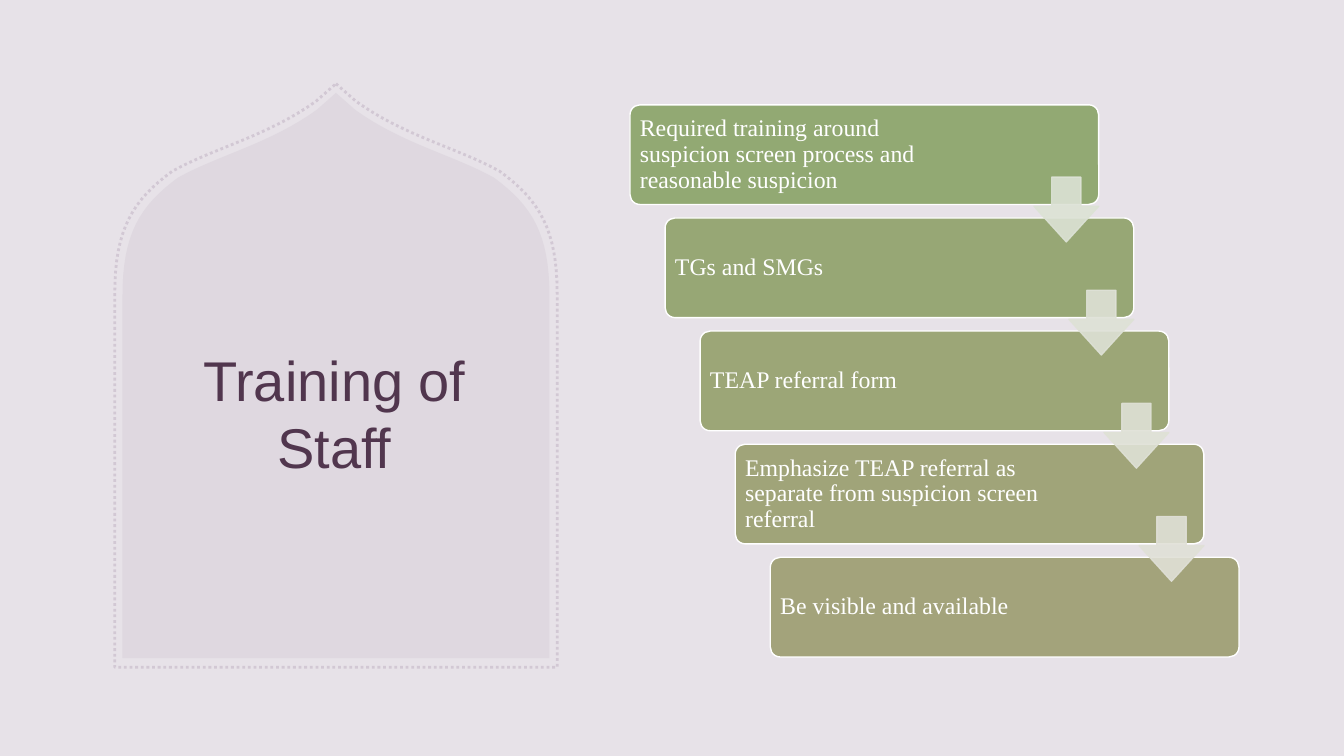
from pptx import Presentation
from pptx.dml.color import RGBColor
from pptx.enum import dml, shapes, text
from pptx.oxml import ns
from pptx.util import Pt
from lxml import etree

BACKGROUND = RGBColor(0xE7, 0xE2, 0xE8)
ARCH_FILL = RGBColor(0xB2, 0xA2, 0xB5)
ARCH_LINE = RGBColor(0xD2, 0xC8, 0xD4)
TITLE_COLOR = RGBColor(0x41, 0x24, 0x3C)
WHITE = RGBColor(0xFF, 0xFF, 0xFF)
STEPS = [
    ("Required training around suspicion screen process and reasonable suspicion",
     RGBColor(0x92, 0xA9, 0x73)),
    ("TGs and SMGs", RGBColor(0x97, 0xA7, 0x75)),
    ("TEAP referral form", RGBColor(0x9C, 0xA6, 0x77)),
    ("Emphasize TEAP referral as separate from suspicion screen referral",
     RGBColor(0xA0, 0xA4, 0x79)),
    ("Be visible and available", RGBColor(0xA3, 0xA3, 0x7B)),
]
ARROW_COLORS = [
    RGBColor(0xDC, 0xE2, 0xD5),
    RGBColor(0xDE, 0xE1, 0xD6),
    RGBColor(0xDF, 0xE1, 0xD6),
    RGBColor(0xE0, 0xE0, 0xD7),
]
SHOULDER_CURVES = [
    [(0.09, 0.03), (0.31, 0.09), (0.55, 0.11), (0.74, 0.15)],
    [(0.74, 0.15), (0.92, 0.2), (1, 0.25), (1, 0.36)],
]


def set_opacity(shape, percent):
    """Make every solid colour of the shape partly transparent."""
    for color in shape._element.spPr.iter(ns.qn("a:srgbClr")):
        alpha = etree.SubElement(color, ns.qn("a:alpha"))
        alpha.set("val", str(percent * 1000))


def bezier(points, count=16):
    """Return points along a cubic curve."""
    start, first, second, end = points
    curve = []
    for index in range(count + 1):
        t = index / count
        weights = ((1 - t) ** 3, 3 * t * (1 - t) ** 2, 3 * t * t * (1 - t), t ** 3)
        curve.append(tuple(
            sum(weight * point[axis] for weight, point in zip(weights, points))
            for axis in (0, 1)))
    return curve


def add_arch(page, left, top, width, height):
    """Draw a pointed arch filling the box."""
    right_half = [(0, 0)]
    for curve in SHOULDER_CURVES:
        right_half += bezier(curve)
    right_half.append((1, 1))
    left_half = [(-x, y) for x, y in reversed(right_half[1:])]
    outline = [(Pt(left + width * (1 + x) / 2), Pt(top + height * y))
               for x, y in right_half + left_half]
    builder = page.shapes.build_freeform(*outline[0])
    builder.add_line_segments(outline[1:], close=True)
    arch = builder.convert_to_shape()
    arch.shadow.inherit = False
    return arch


def add_title_panel(page, left, top, width, height):
    """Place the dotted arch, the filled arch and the title in the box."""
    filled = add_arch(page, left + 5.5, top + 6.5, width - 11, height - 13)
    filled.fill.solid()
    filled.fill.fore_color.rgb = ARCH_FILL
    filled.line.fill.background()
    set_opacity(filled, 15)

    dotted = add_arch(page, left, top, width, height)
    dotted.fill.background()
    dotted.line.color.rgb = ARCH_LINE
    dotted.line.width = Pt(2)
    dotted.line.dash_style = dml.MSO_LINE.ROUND_DOT

    title = page.shapes.title
    title.left, title.top = Pt(left + 34), Pt(top + 121.5)
    title.width, title.height = Pt(245.5), Pt(227)
    frame = title.text_frame
    frame.word_wrap = True
    frame.vertical_anchor = text.MSO_ANCHOR.MIDDLE
    para = frame.paragraphs[0]
    para.alignment = text.PP_ALIGN.CENTER
    span = para.add_run()
    span.text = "Training of Staff"
    span.font.name = "Arial"
    span.font.size = Pt(40)
    span.font.color.rgb = TITLE_COLOR


def add_step(page, wording, color, left, top, width, height):
    """Draw one rounded step with its wording."""
    step = page.shapes.add_shape(
        shapes.MSO_SHAPE.ROUNDED_RECTANGLE, Pt(left), Pt(top), Pt(width), Pt(height))
    step.adjustments[0] = 0.1
    step.shadow.inherit = False
    step.fill.solid()
    step.fill.fore_color.rgb = color
    step.line.color.rgb = WHITE
    step.line.width = Pt(1)
    frame = step.text_frame
    frame.word_wrap = True
    frame.vertical_anchor = text.MSO_ANCHOR.MIDDLE
    frame.margin_left = frame.margin_top = frame.margin_bottom = Pt(5)
    frame.margin_right = Pt(86)
    para = frame.paragraphs[0]
    para.alignment = text.PP_ALIGN.LEFT
    para.line_spacing = 0.9
    span = para.add_run()
    span.text = wording
    span.font.name = "Times New Roman"
    span.font.size = Pt(17)
    span.font.color.rgb = WHITE


def add_arrow(page, color, left, top, size):
    """Draw one translucent down arrow."""
    arrow = page.shapes.add_shape(
        shapes.MSO_SHAPE.DOWN_ARROW, Pt(left), Pt(top), Pt(size), Pt(size))
    arrow.adjustments[0] = 0.45
    arrow.adjustments[1] = 0.55
    arrow.shadow.inherit = False
    arrow.fill.solid()
    arrow.fill.fore_color.rgb = color
    arrow.line.color.rgb = color
    arrow.line.width = Pt(1)
    set_opacity(arrow, 90)


def add_staircase(page, left, top, width, height):
    """Place the steps down the box with an arrow between neighbours."""
    step_width, step_height, arrow_size = 334.8, 71.2, 46.3
    shift = (width - step_width) / (len(STEPS) - 1)
    drop = (height - step_height) / (len(STEPS) - 1)
    for index, (wording, color) in enumerate(STEPS):
        add_step(page, wording, color, left + index * shift, top + index * drop,
                 step_width, step_height)
    for index, color in enumerate(ARROW_COLORS):
        add_arrow(page, color, left + index * shift + step_width - arrow_size,
                  top + index * drop + 51.6, arrow_size)


def main():
    """Build and save the deck."""
    deck = Presentation()
    deck.slide_width, deck.slide_height = Pt(960), Pt(540)
    page = deck.slides.add_slide(deck.slide_layouts.get_by_name("Title Only"))
    page.background.fill.solid()
    page.background.fill.fore_color.rgb = BACKGROUND
    add_title_panel(page, 82, 59.8, 316, 416.8)
    add_staircase(page, 450, 74.9, 435, 394.4)
    deck.save("out.pptx")


if __name__ == "__main__":
    main()
